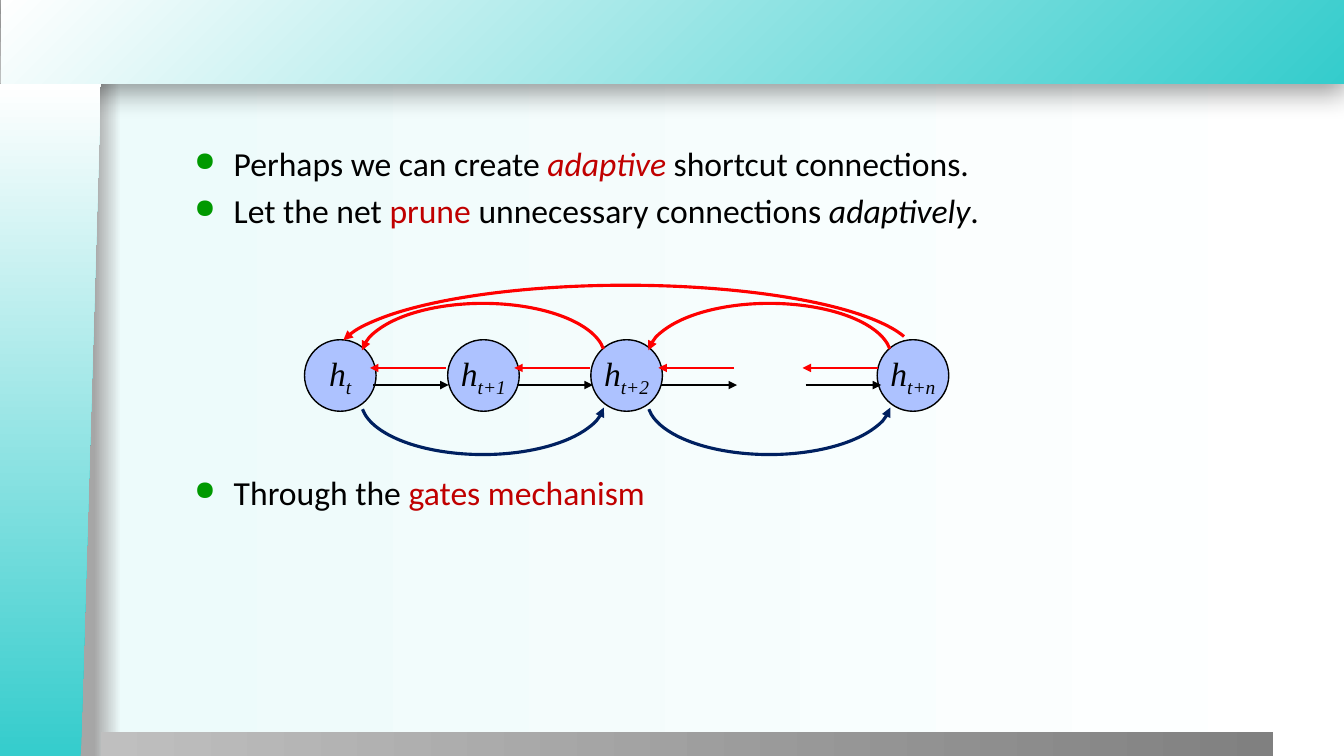
from lxml import etree
from pptx import Presentation
from pptx import util as u
from pptx.dml.color import RGBColor
from pptx.enum import shapes, text
from pptx.oxml.ns import nsdecls, qn

BLACK, RED, NAVY, DARK_RED = "000000", "FF0000", "002060", "C00000"
SHAPE = shapes.MSO_SHAPE


def color(hex_code):
    return RGBColor.from_string(hex_code)


def box(left, top, width, height):
    return [u.Inches(value) for value in (left, top, width, height)]


def set_gradient(fill, owner, stops, corner=False):
    """Fill with (percent, colour) stops, left to right or from the lower right corner."""
    fill.background()
    stop_xml = "".join(
        f'<a:gs pos="{percent * 1000}"><a:srgbClr val="{code}"/></a:gs>'
        for percent, code in stops)
    course = ('<a:path path="circle"><a:fillToRect l="100000" t="100000"/></a:path>'
              if corner else '<a:lin ang="0" scaled="0"/>')
    gradient = etree.fromstring(
        f'<a:gradFill {nsdecls("a")} rotWithShape="1">'
        f'<a:gsLst>{stop_xml}</a:gsLst>{course}</a:gradFill>')
    empty = next(owner.iter(qn("a:noFill")))
    empty.getparent().replace(empty, gradient)


def add_band(slide, kind, area, stops, corner=False):
    band = slide.shapes.add_shape(kind, *box(*area))
    band.shadow.inherit = False
    set_gradient(band.fill, band._element, stops, corner)
    band.line.fill.background()
    return band


def add_run(paragraph, words, size=24, font="Calibri", fill=BLACK,
            italic=False, baseline=None):
    run = paragraph.add_run()
    run.text = words
    run.font.size = u.Pt(size)
    run.font.name = font
    run.font.italic = italic
    run.font.color.rgb = color(fill)
    if baseline is not None:
        run.font._element.set("baseline", str(baseline * 1000))


def set_line(shape, fill, width, arrow=None):
    """Style an outline; arrow is headEnd (start) or tailEnd (finish)."""
    shape.line.color.rgb = color(fill)
    shape.line.width = u.Pt(width)
    if arrow:
        outline = shape.line._get_or_add_ln()
        etree.SubElement(outline, qn(f"a:{arrow}"), type="triangle")


def draw_backdrop(slide, width, height):
    set_gradient(slide.background.fill, slide.element,
                 [(7, "A6A6A6"), (9, "EDFBFB"), (100, "FFFFFF")])
    teal = [(0, "34CCCC"), (100, "FFFFFF")]
    header_height, sidebar_width = 0.83, 1

    # Header with a soft shadow below
    header = add_band(slide, SHAPE.RECTANGLE, (0.01, 0, width, header_height),
                      teal, corner=True)
    effects = header._element.spPr.find(qn("a:effectLst"))
    effects.append(etree.fromstring(
        f'<a:outerShdw {nsdecls("a")} blurRad="{u.Pt(20)}" dist="{u.Pt(6)}" '
        'dir="5400000" algn="t" rotWithShape="0"><a:srgbClr val="000000">'
        '<a:alpha val="40000"/></a:srgbClr></a:outerShdw>'))

    # Slanted sidebar, a flipped shape turned upright
    length = height - header_height + 0.01
    sidebar = add_band(
        slide, SHAPE.FLOWCHART_MANUAL_INPUT,
        ((sidebar_width - length) / 2, header_height + (length - sidebar_width) / 2,
         length, sidebar_width), teal)
    sidebar.rotation = 270
    sidebar._element.spPr.xfrm.set("flipV", "1")

    # Footer
    add_band(slide, SHAPE.RECTANGLE, (sidebar_width, height - 0.24, 11.63, 0.25),
             [(0, "BFBFBF"), (100, "808080")])


def draw_bullets(slide, area, points):
    frame = slide.shapes.add_textbox(*box(*area)).text_frame
    frame.word_wrap = True
    for index, runs in enumerate(points):
        point = frame.paragraphs[0] if index == 0 else frame.add_paragraph()
        point.space_before = u.Pt(4.3)
        properties = point._p.get_or_add_pPr()
        properties.set("marL", str(u.Inches(0.39)))
        properties.set("indent", str(u.Inches(-0.39)))
        bullet_color = etree.SubElement(properties, qn("a:buClr"))
        etree.SubElement(bullet_color, qn("a:srgbClr"), val="009900")
        etree.SubElement(properties, qn("a:buSzPct"), val="80000")
        etree.SubElement(properties, qn("a:buChar"), char="●")
        for words, style in runs:
            add_run(point, words, **style)


def draw_state(slide, left, top, size, subscript):
    state = slide.shapes.add_shape(SHAPE.OVAL, *box(left, top, size, size))
    state.shadow.inherit = False
    state.fill.solid()
    state.fill.fore_color.rgb = color("ADC2FF")
    set_line(state, BLACK, 1)
    frame = state.text_frame
    frame.margin_left = frame.margin_right = frame.margin_top = frame.margin_bottom = 0
    frame.word_wrap = False
    frame.vertical_anchor = text.MSO_ANCHOR.MIDDLE
    label = frame.paragraphs[0]
    label.alignment = text.PP_ALIGN.CENTER
    add_run(label, "h", font="Times New Roman", italic=True)
    add_run(label, subscript, font="Times New Roman", italic=True, baseline=-25)


def draw_arrow(slide, start, end, y, fill):
    arrow = slide.shapes.add_connector(
        shapes.MSO_CONNECTOR.STRAIGHT, *box(start, y, end, y))
    set_line(arrow, fill, 2, "tailEnd")
    etree.SubElement(arrow._element.spPr, qn("a:effectLst"))


def draw_shortcut(slide, area, fill, below=False):
    arc = slide.shapes.add_shape(SHAPE.ARC, *box(*area))
    arc.shadow.inherit = False
    arc.adjustments[0], arc.adjustments[1] = 109.97, 213.56
    arc.fill.background()
    set_line(arc, fill, 2.25, "headEnd")
    if below:
        arc._element.spPr.xfrm.set("flipH", "1")
        arc._element.spPr.xfrm.set("flipV", "1")


def draw_network(slide, left, top):
    step, arrow_length = 1.42, 0.75

    # Hidden states; the slot before the last stays open
    for slot, subscript in ((0, "t"), (1, "t+1"), (2, "t+2"), (4, "t+n")):
        draw_state(slide, left + slot * step, top, 0.71, subscript)

    # Forward and backward steps; the last pair sits in the open slot
    for slot in range(4):
        start = left + 0.68 + slot * 1.43
        draw_arrow(slide, start, start + arrow_length, top + 0.45, BLACK)
        draw_arrow(slide, start - 0.03 + arrow_length, start - 0.03, top + 0.28, RED)

    # Shortcuts over two steps, then the one over the whole row
    for arc_left in (left + 0.56, left + 0.56 + 2 * step):
        draw_shortcut(slide, (arc_left, top - 0.36, 2.42, 1.07), RED)
        draw_shortcut(slide, (arc_left, top + 0.07, 2.42, 1.07), NAVY, below=True)
    draw_shortcut(slide, (left + 0.31, top - 0.54, 5.75, 1.41), RED)


def main():
    deck = Presentation()
    width, height = 13.33, 7.5
    deck.slide_width, deck.slide_height = u.Inches(width), u.Inches(height)
    slide = deck.slides.add_slide(deck.slide_layouts[6])

    draw_backdrop(slide, width, height)
    draw_bullets(slide, (1.83, 1.37, 10.8, 1.05), [
        [("Perhaps we can create ", {}),
         ("adaptive ", {"fill": DARK_RED, "italic": True}),
         ("shortcut connections.", {})],
        [("Let the net ", {}), ("prune", {"fill": DARK_RED}),
         (" unnecessary connections ", {}),
         ("adaptively", {"italic": True}), (".", {})],
    ])
    draw_network(slide, 3.02, 3.37)
    draw_bullets(slide, (1.83, 4.63, 10.8, 0.58), [
        [("Through the ", {}), ("gates mechanism", {"fill": DARK_RED})],
    ])
    deck.save("out.pptx")


if __name__ == "__main__":
    main()
